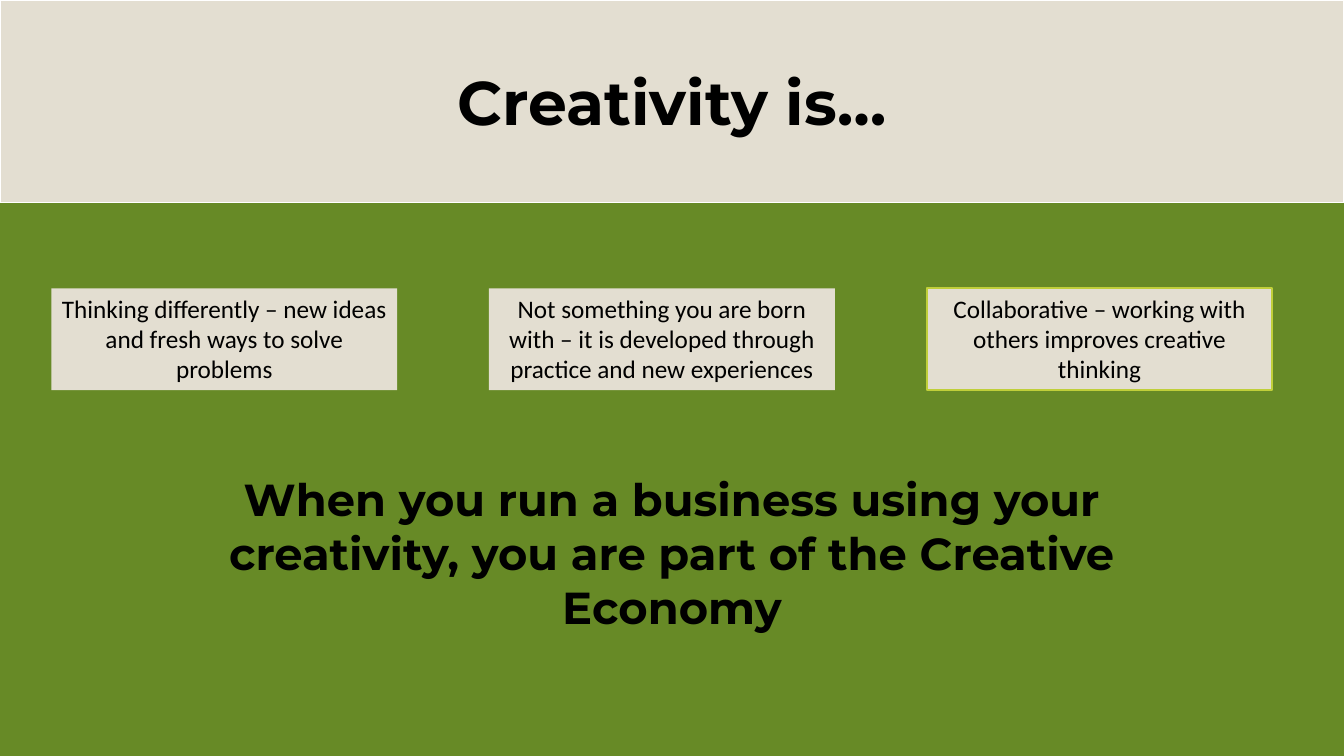
"""Build the "Creativity is…" slide: a title band, three cards and a closing statement."""
from dataclasses import dataclass

from pptx import Presentation
from pptx.dml.color import RGBColor
from pptx.enum.shapes import MSO_SHAPE
from pptx.enum.text import MSO_ANCHOR, MSO_AUTO_SIZE, PP_ALIGN
from pptx.util import Inches, Pt


@dataclass(frozen=True)
class Theme:
    green: str = "678A26"
    sand: str = "E3DED1"
    white: str = "FFFFFF"
    lime: str = "C0CF3A"
    ink: str = "000000"
    heading_font: str = "Montserrat"
    body_font: str = "Calibri"
    title_size: int = 44
    statement_size: int = 32
    card_size: int = 18


theme = Theme()


def add_panel(left, top, width, height, outline=None, weight=1):
    sp = s.shapes.add_shape(MSO_SHAPE.RECTANGLE, Inches(left), Inches(top), Inches(width), Inches(height))
    sp.shadow.inherit = False
    sp.fill.solid()
    sp.fill.fore_color.rgb = RGBColor.from_string(theme.sand)
    if outline:
        sp.line.color.rgb = RGBColor.from_string(outline)
        sp.line.width = Pt(weight)
    else:
        sp.line.fill.background()
    return sp


def write(sp, text, font, size, bold=False, anchor=MSO_ANCHOR.TOP, fit=MSO_AUTO_SIZE.SHAPE_TO_FIT_TEXT):
    tf = sp.text_frame
    tf.word_wrap = True
    tf.auto_size = fit
    tf.vertical_anchor = anchor
    p = tf.paragraphs[0]
    p.alignment = PP_ALIGN.CENTER
    r = p.add_run()
    r.text = text
    r.font.name = font
    r.font.size = Pt(size)
    r.font.bold = bold
    r.font.color.rgb = RGBColor.from_string(theme.ink)


W, H = 13.33, 7.5
prs = Presentation()
prs.slide_width, prs.slide_height = Inches(W), Inches(H)
s = prs.slides.add_slide(prs.slide_layouts[6])
s.background.fill.solid()
s.background.fill.fore_color.rgb = RGBColor.from_string(theme.green)

band = add_panel(0, 0, W, 2.01, theme.white)
write(band, "Creativity is…", theme.heading_font, theme.title_size, True, MSO_ANCHOR.MIDDLE, MSO_AUTO_SIZE.NONE)

card_left, card_top, card_width, card_height, card_gap = 0.51, 2.86, 3.43, 1.01, 0.91
cards = [
    ("Thinking differently – new ideas and fresh ways to solve problems", None),
    ("Not something you are born with – it is developed through practice and new experiences", None),
    ("Collaborative – working with others improves creative thinking", theme.lime),
]
for col, (text, outline) in enumerate(cards):
    left = card_left + col * (card_width + card_gap)
    card = add_panel(left, card_top, card_width, card_height, outline, 1.5)
    write(card, text, theme.body_font, theme.card_size)

statement_width = 9.59
statement = s.shapes.add_textbox(
    Inches((W - statement_width) / 2), Inches(4.63), Inches(statement_width), Inches(1.72))
write(statement, "When you run a business using your creativity, you are part of the Creative Economy",
      theme.heading_font, theme.statement_size, True)

prs.save("out.pptx")
